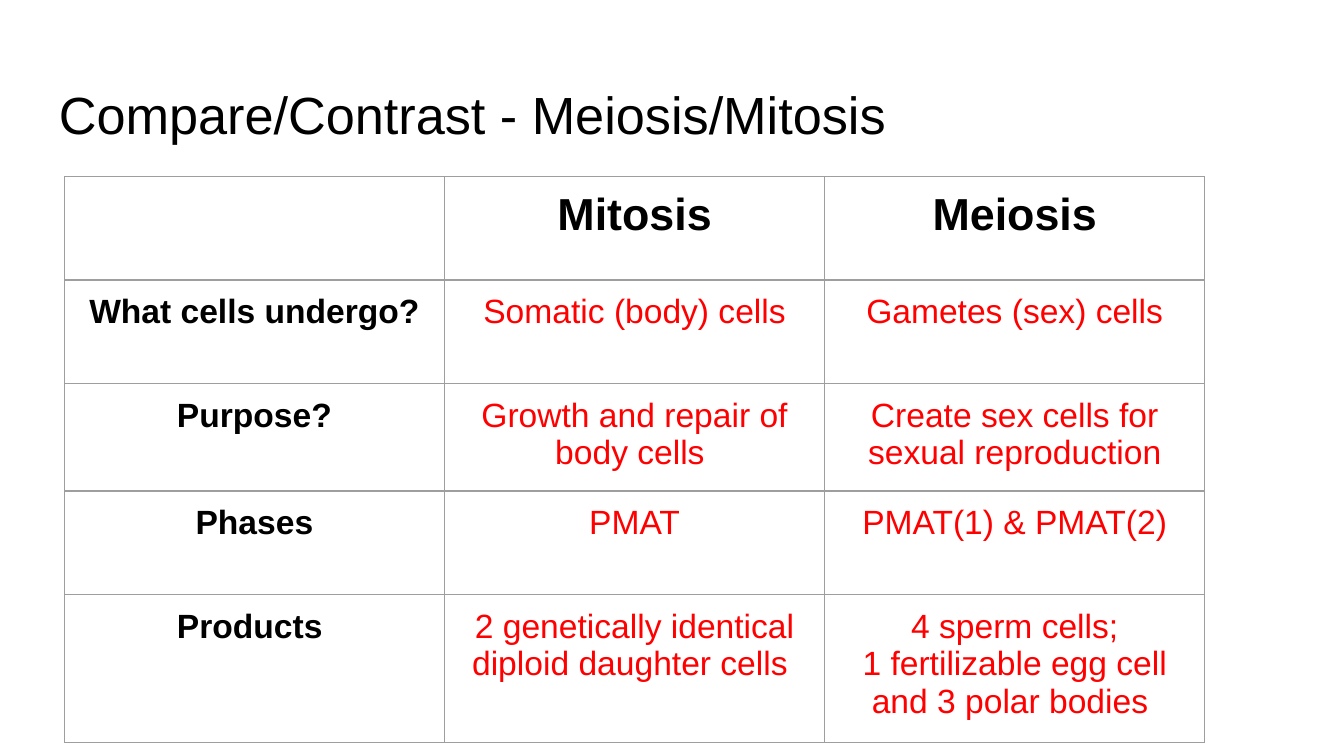
from dataclasses import dataclass

from lxml.etree import SubElement
from pptx import Presentation
from pptx.dml.color import RGBColor as RGB
from pptx.enum.text import MSO_ANCHOR as ANCHOR, PP_ALIGN as ALIGN
from pptx.oxml.ns import qn
from pptx.util import Pt


@dataclass(frozen=True)
class Theme:
    font: str = "Arial"
    ink: RGB = RGB(0, 0, 0)
    answer: RGB = RGB(255, 0, 0)
    border: str = "9E9E9E"
    border_width: float = 0.75
    inset: float = 7.2
    title_size: int = 28
    head_size: int = 24
    body_size: int = 18


THEME = Theme()

ROWS = [
    ("", "Mitosis", "Meiosis"),
    ("What cells undergo?", "Somatic (body) cells", "Gametes (sex) cells"),
    ("Purpose?", "Growth and repair of body cells ",
     "Create sex cells for sexual reproduction"),
    ("Phases", "PMAT", "PMAT(1) & PMAT(2)"),
    ("Products ", "2 genetically identical diploid daughter cells ",
     "4 sperm cells;\n1 fertilizable egg cell and 3 polar bodies "),
]


def apply(target, values):
    for name, value in values.items():
        setattr(target, name, value)


def margins(**changes):
    sides = dict.fromkeys(("left", "top", "right", "bottom"), THEME.inset)
    return {f"margin_{side}": Pt(v) for side, v in (sides | changes).items()}


def write(tf, text, size, color, bold=False, align=ALIGN.LEFT):
    tf.text = text
    for p in tf.paragraphs:
        p.alignment = align
        apply(p.font, {"name": THEME.font, "size": Pt(size), "bold": bold})
        p.font.color.rgb = color
        for r in p.runs:
            apply(r.font, {"name": THEME.font, "size": Pt(size), "bold": bold})
            r.font.color.rgb = color


def draw_borders(cell):
    tc_pr = cell._tc.get_or_add_tcPr()
    for i, side in enumerate("LRTB"):
        ln = SubElement(tc_pr, qn(f"a:ln{side}"), w=str(Pt(THEME.border_width)))
        fill = SubElement(ln, qn("a:solidFill"))
        SubElement(fill, qn("a:srgbClr"), val=THEME.border)
        tc_pr.insert(i, ln)


def add_title(slide, left, top, width, height):
    sp = slide.shapes.add_textbox(Pt(left), Pt(top), Pt(width), Pt(height))
    tf = sp.text_frame
    apply(tf, {"word_wrap": True, "vertical_anchor": ANCHOR.TOP} | margins(top=9))
    write(tf, "Compare/Contrast - Meiosis/Mitosis", THEME.title_size, THEME.ink)


def add_comparison(slide, left, top, width, height):
    n_rows, n_cols = len(ROWS), len(ROWS[0])
    table = slide.shapes.add_table(
        n_rows, n_cols, Pt(left), Pt(top), Pt(width), Pt(height)).table
    apply(table, {"first_row": False, "horz_banding": False})
    for column in table.columns:
        column.width = Pt(width / n_cols)
    for i, texts in enumerate(ROWS):
        table.rows[i].height = Pt(height / n_rows)
        for j, text in enumerate(texts):
            cell = table.cell(i, j)
            apply(cell, {"vertical_anchor": ANCHOR.TOP} | margins())
            cell.fill.background()
            draw_borders(cell)
            label = i == 0 or j == 0
            write(cell.text_frame, text,
                  THEME.body_size if i else THEME.head_size,
                  THEME.ink if label else THEME.answer, label, ALIGN.CENTER)


def main():
    prs = Presentation()
    apply(prs, {"slide_width": Pt(720), "slide_height": Pt(405)})
    slide = prs.slides.add_slide(prs.slide_layouts[6])
    add_title(slide, 24.5, 35, 671, 45)
    add_comparison(slide, 34.5, 94.5, 611, 277.25)
    prs.save("out.pptx")


if __name__ == "__main__":
    main()
